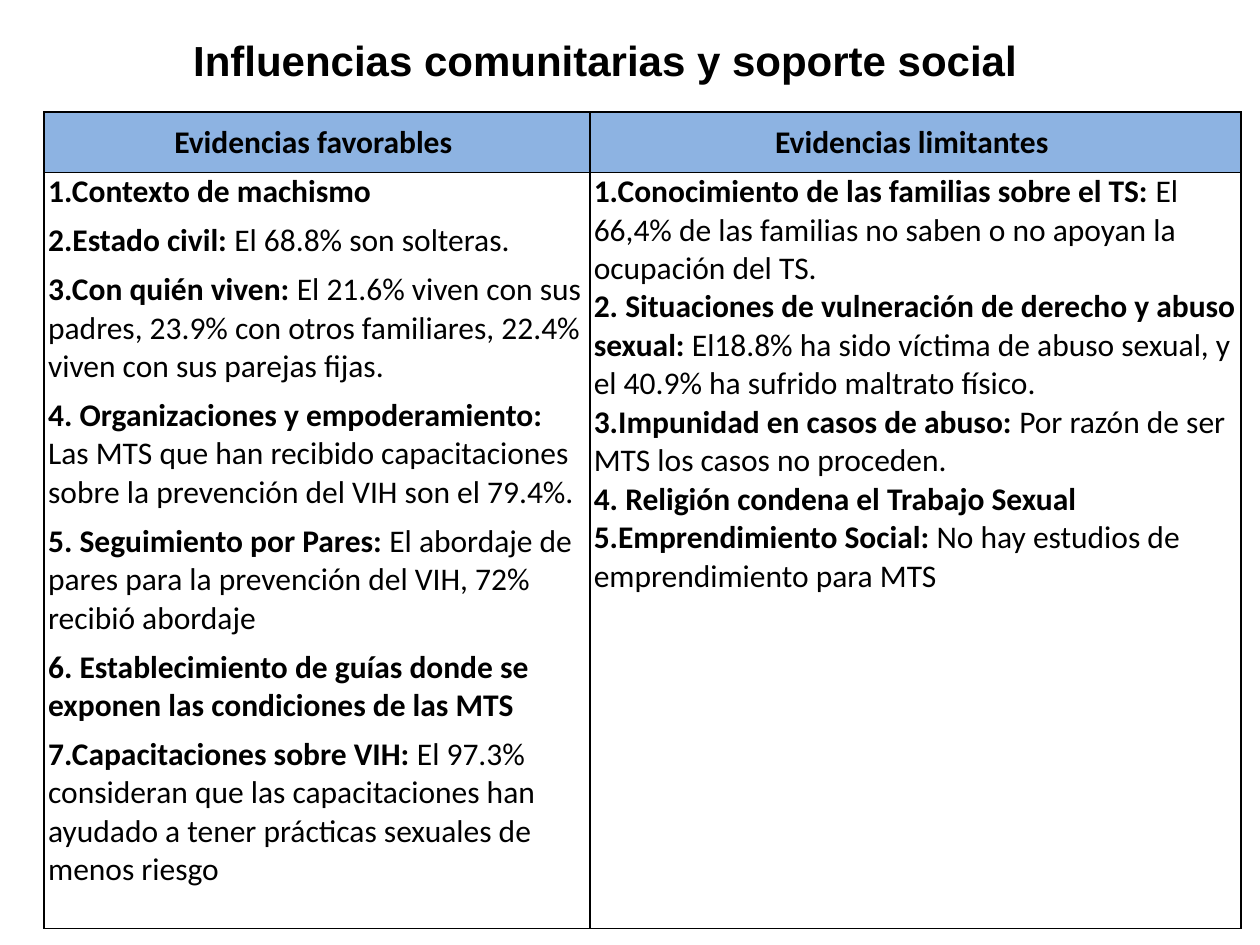
from lxml.etree import SubElement
from pptx import Presentation
from pptx.dml.color import RGBColor
from pptx.enum.text import MSO_ANCHOR as Anchor, PP_ALIGN as Align
from pptx.oxml.ns import qn
from pptx.util import Cm, Pt

# Content: each point is (bold lead, plain detail)
TITLE = "Influencias comunitarias y soporte social"
HEADINGS = ["Evidencias favorables ", "Evidencias limitantes "]
FAVORABLE = [
    ("1.Contexto de machismo", ""),
    ("2.Estado civil: ", "El 68.8% son solteras."),
    ("3.Con quién viven: ", "El 21.6% viven con sus padres, 23.9% con otros "
     "familiares, 22.4% viven con sus parejas fijas."),
    ("4. Organizaciones y empoderamiento: ", "Las MTS que han recibido "
     "capacitaciones sobre la prevención del VIH son el 79.4%."),
    ("5. Seguimiento por Pares: ", "El abordaje de pares para la prevención "
     "del VIH, 72% recibió abordaje"),
    ("6. Establecimiento de guías donde se exponen las condiciones de las MTS", ""),
    ("7.Capacitaciones sobre VIH: ", "El 97.3% consideran que las capacitaciones "
     "han ayudado a tener prácticas sexuales de menos riesgo"),
]
LIMITING = [
    ("1.Conocimiento de las familias sobre el TS: ", "El 66,4% de las familias "
     "no saben o no apoyan la ocupación del TS."),
    ("2. Situaciones de vulneración de derecho y abuso sexual: ", "El18.8% ha sido "
     "víctima de abuso sexual, y el 40.9% ha sufrido maltrato físico."),
    ("3.Impunidad en casos de abuso: ", "Por razón de ser MTS los casos no proceden."),
    ("4. Religión condena el Trabajo Sexual", ""),
    ("5.Emprendimiento Social: ", "No hay estudios de emprendimiento para MTS"),
]

BLACK = RGBColor(0x00, 0x00, 0x00)
HEADER_BLUE = RGBColor(0x8D, 0xB3, 0xE2)
COLUMN_WIDTHS = [Cm(11), Cm(13.13)]
ROW_HEIGHTS = [Cm(1.22), Cm(15.24)]
CELL_FORMAT = {"margin_left": Cm(0.08), "margin_right": Cm(0.08),
               "margin_top": 0, "margin_bottom": 0}


def add_text(paragraph, text, bold=True, name="Calibri", size=Pt(18)):
    run = paragraph.add_run()
    run.text = text
    for key, value in {"name": name, "size": size, "bold": bold}.items():
        setattr(run.font, key, value)
    run.font.color.rgb = BLACK


def write_points(cell, points, space_before):
    frame = cell.text_frame
    for i, (lead, detail) in enumerate(points):
        paragraph = frame.add_paragraph() if i else frame.paragraphs[0]
        paragraph.space_before = space_before
        add_text(paragraph, lead)
        if detail:
            add_text(paragraph, detail, bold=False)


def add_borders(cell):
    properties = cell._tc.get_or_add_tcPr()
    for position, side in enumerate(("a:lnL", "a:lnR", "a:lnT", "a:lnB")):
        line = properties.makeelement(qn(side), {"w": str(Pt(1))})
        properties.insert(position, line)
        fill = SubElement(line, qn("a:solidFill"))
        SubElement(fill, qn("a:srgbClr"), val=str(BLACK))


def main():
    prs = Presentation()
    prs.slide_width, prs.slide_height = Cm(25.4), Cm(19.05)
    slide = prs.slides.add_slide(prs.slide_layouts[6])

    # Evidence table
    table = slide.shapes.add_table(
        2, 2, Cm(0.89), Cm(2.26), sum(COLUMN_WIDTHS), sum(ROW_HEIGHTS)).table
    for column, width in zip(table.columns, COLUMN_WIDTHS):
        column.width = width
    for row, height in zip(table.rows, ROW_HEIGHTS):
        row.height = height
    for cell in table.iter_cells():
        for key, value in CELL_FORMAT.items():
            setattr(cell, key, value)
        cell.fill.background()
        add_borders(cell)

    # Header row
    for column, heading in enumerate(HEADINGS):
        cell = table.cell(0, column)
        cell.fill.solid()
        cell.fill.fore_color.rgb = HEADER_BLUE
        cell.vertical_anchor = Anchor.MIDDLE
        paragraph = cell.text_frame.paragraphs[0]
        paragraph.alignment = Align.CENTER
        add_text(paragraph, heading)

    # Evidence columns
    write_points(table.cell(1, 0), FAVORABLE, Pt(6))
    write_points(table.cell(1, 1), LIMITING, Pt(0))

    # Title
    title = slide.shapes.add_textbox(Cm(0.3), Cm(0.58), Cm(23.8), Cm(1.3)).text_frame
    title.word_wrap = True
    title.paragraphs[0].alignment = Align.CENTER
    add_text(title.paragraphs[0], TITLE, name="Arial", size=Pt(24))

    prs.save("out.pptx")


if __name__ == "__main__":
    main()
